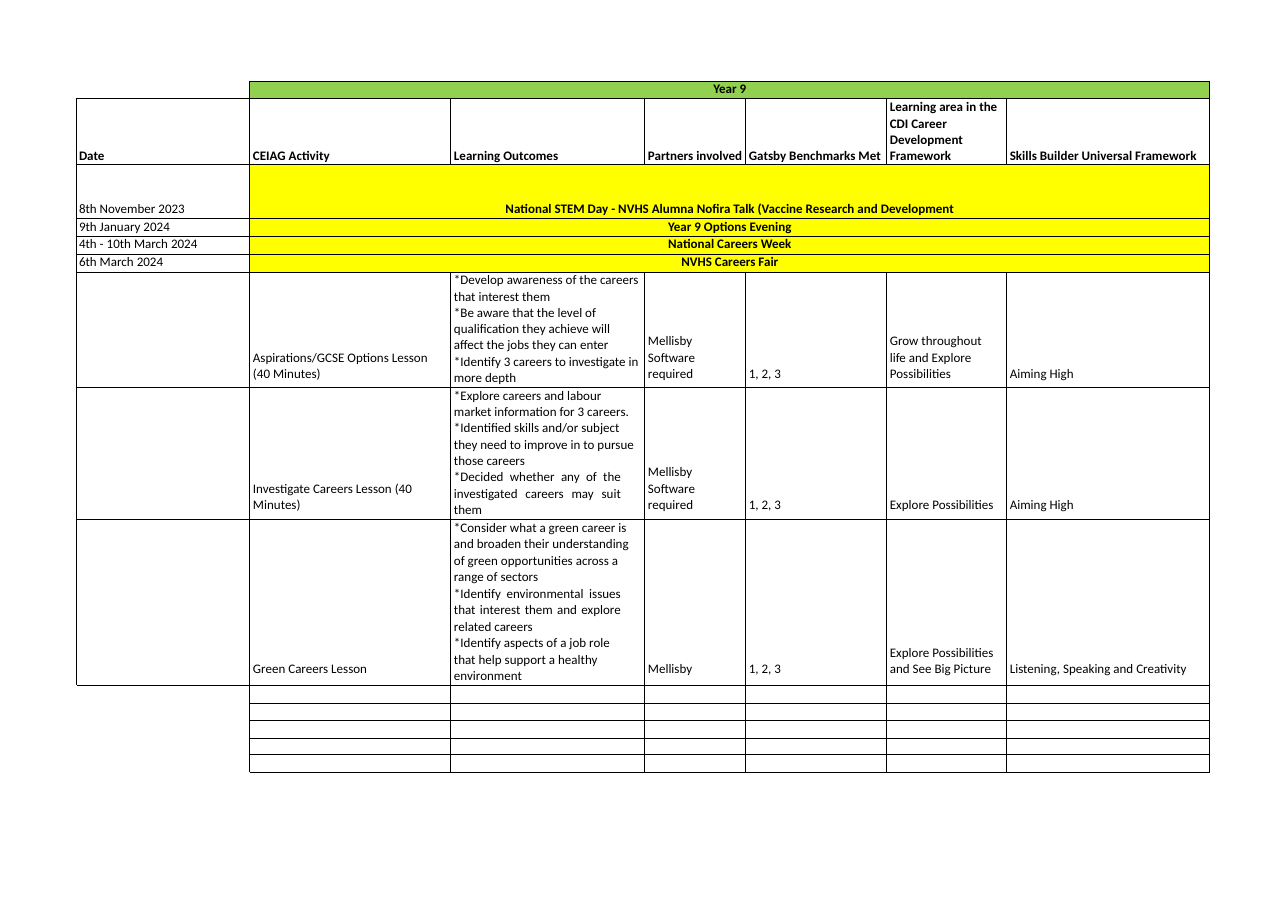
from lxml.etree import SubElement
from pptx import Presentation
from pptx.dml.color import RGBColor
from pptx.enum.text import MSO_VERTICAL_ANCHOR as Anchor, PP_ALIGN as Align
from pptx.oxml.ns import qn
from pptx.util import Emu, Pt

EMU_PER_PX = 914400 / 110.2
BLACK = RGBColor(0x00, 0x00, 0x00)
GREEN = RGBColor(0x92, 0xD0, 0x50)
YELLOW = RGBColor(0xFF, 0xFF, 0x00)

COLUMN_EDGES = [76, 250, 451, 645, 746, 887, 1007, 1210]
ROW_EDGES = [81, 99, 165, 219, 237, 254, 272, 387, 519, 685, 703, 720, 738, 755, 773]
FIRST_LESSON_ROW = 6
FIRST_EMPTY_ROW = 9
OUTCOMES_COLUMN = 2

HEADINGS = [
    "Date", "CEIAG Activity", "Learning Outcomes", "Partners involved",
    "Gatsby Benchmarks Met", "Learning area in the CDI Career Development Framework",
    "Skills Builder Universal Framework",
]
EVENTS = [
    ("8th November 2023",
     "National STEM Day - NVHS Alumna Nofira Talk (Vaccine Research and Development"),
    ("9th January 2024", "Year 9 Options Evening"),
    ("4th - 10th March 2024", "National Careers Week"),
    ("6th March 2024", "NVHS Careers Fair"),
]
SUITABLE_CAREERS = "*Decided whether any of the investigated careers may suit them"
GREEN_ISSUES = "*Identify environmental issues that interest them and explore related careers"
JUSTIFIED = {SUITABLE_CAREERS, GREEN_ISSUES}
LESSONS = [
    (5, 10.6, [
        "Aspirations/GCSE Options Lesson (40 Minutes)",
        ["*Develop awareness of the careers that interest them",
         "*Be aware that the level of qualification they achieve will affect the jobs they can enter",
         "*Identify 3 careers to investigate in more depth"],
        "Mellisby Software required", "1, 2, 3",
        "Grow throughout life and Explore Possibilities", "Aiming High"]),
    (6, 10.7, [
        "Investigate Careers Lesson (40 Minutes)",
        ["*Explore careers and labour market information for 3 careers.",
         "*Identified skills and/or subject they need to improve in to pursue those careers",
         SUITABLE_CAREERS],
        "Mellisby Software required", "1, 2, 3", "Explore Possibilities", "Aiming High"]),
    (8, 10.8, [
        "Green Careers Lesson",
        ["*Consider what a green career is and broaden their understanding of green "
         "opportunities across a range of sectors",
         GREEN_ISSUES,
         "*Identify aspects of a job role that help support a healthy environment"],
        "Mellisby", "1, 2, 3", "Explore Possibilities and See Big Picture",
        "Listening, Speaking and Creativity"]),
]


def px(length):
    return Emu(round(length * EMU_PER_PX))


def apply(target, values):
    for name, value in values.items():
        setattr(target, name, value)


def gaps(edges):
    return [end - start for start, end in zip(edges, edges[1:])]


def draw_borders(cell, sides):
    properties = cell._tc.get_or_add_tcPr()
    for side in sides:
        line = SubElement(properties, qn("a:ln" + side), w=str(Pt(0.75)))
        fill = SubElement(line, qn("a:solidFill"))
        SubElement(fill, qn("a:srgbClr"), val=str(BLACK))


def prepare_cell(cell, sides):
    draw_borders(cell, sides)
    cell.fill.background()
    apply(cell, {"margin_left": 0, "margin_right": 0, "margin_top": 0, "margin_bottom": 0})
    SubElement(cell.text_frame.paragraphs[0]._p, qn("a:endParaRPr"), sz="800")


def write_cell(cell, texts, bold=False, align=Align.LEFT, spacing=10,
               bottom=2, right=0, anchor=Anchor.BOTTOM):
    left = 0 if align == Align.CENTER else 3
    apply(cell, {"margin_left": px(left), "margin_right": px(right),
                 "margin_bottom": px(bottom), "vertical_anchor": anchor})
    frame = cell.text_frame
    for index, text in enumerate(texts):
        paragraph = frame.add_paragraph() if index else frame.paragraphs[0]
        run = paragraph.add_run()
        run.text = text
        justified = text in JUSTIFIED
        apply(paragraph, {"alignment": Align.JUSTIFY if justified else align,
                          "line_spacing": Pt(spacing)})
        if justified:
            paragraph._p.get_or_add_pPr().set("marR", str(px(18)))
        apply(run.font, {"name": "Calibri", "size": Pt(8.5), "bold": bold})
        run.font.color.rgb = BLACK


def write_banner(table, row, text, color):
    cell = table.cell(row, 1)
    cell.merge(table.cell(row, len(HEADINGS) - 1))
    cell.fill.solid()
    cell.fill.fore_color.rgb = color
    write_cell(cell, [text], bold=True, align=Align.CENTER)


def write_lesson(table, row, bottom, spacing, entries):
    for column, entry in enumerate(entries, 1):
        cell = table.cell(row, column)
        if column == OUTCOMES_COLUMN:
            write_cell(cell, entry, spacing=spacing, bottom=0, right=6, anchor=Anchor.TOP)
        else:
            write_cell(cell, [entry], spacing=10.8, bottom=bottom, right=6)


def border_sides(row, column):
    if column == 0 and row == 0:
        return "RB"
    if column == 0 and row == FIRST_EMPTY_ROW:
        return "RT"
    if column == 0 and row > FIRST_EMPTY_ROW:
        return "R"
    return "LRTB"


def add_calendar(slide):
    widths, heights = gaps(COLUMN_EDGES), gaps(ROW_EDGES)
    table = slide.shapes.add_table(
        len(heights), len(widths), px(COLUMN_EDGES[0]), px(ROW_EDGES[0]),
        px(sum(widths)), px(sum(heights))).table
    apply(table, {"first_row": False, "horz_banding": False})
    for column, width in zip(table.columns, widths):
        column.width = px(width)
    for row, height in zip(table.rows, heights):
        row.height = px(height)
    for row in range(len(heights)):
        for column in range(len(widths)):
            prepare_cell(table.cell(row, column), border_sides(row, column))
    table.cell(FIRST_EMPTY_ROW, 0).merge(table.cell(len(heights) - 1, 0))
    return table


def main():
    presentation = Presentation()
    apply(presentation, {"slide_width": px(1288), "slide_height": px(910)})
    slide = presentation.slides.add_slide(presentation.slide_layouts[6])
    table = add_calendar(slide)
    write_banner(table, 0, "Year 9", GREEN)
    for column, heading in enumerate(HEADINGS):
        write_cell(table.cell(1, column), [heading], bold=True, spacing=10.6, bottom=1)
    for row, (date, event) in enumerate(EVENTS, 2):
        write_cell(table.cell(row, 0), [date])
        write_banner(table, row, event, YELLOW)
    for row, lesson in enumerate(LESSONS, FIRST_LESSON_ROW):
        write_lesson(table, row, *lesson)
    presentation.save("out.pptx")


if __name__ == "__main__":
    main()
